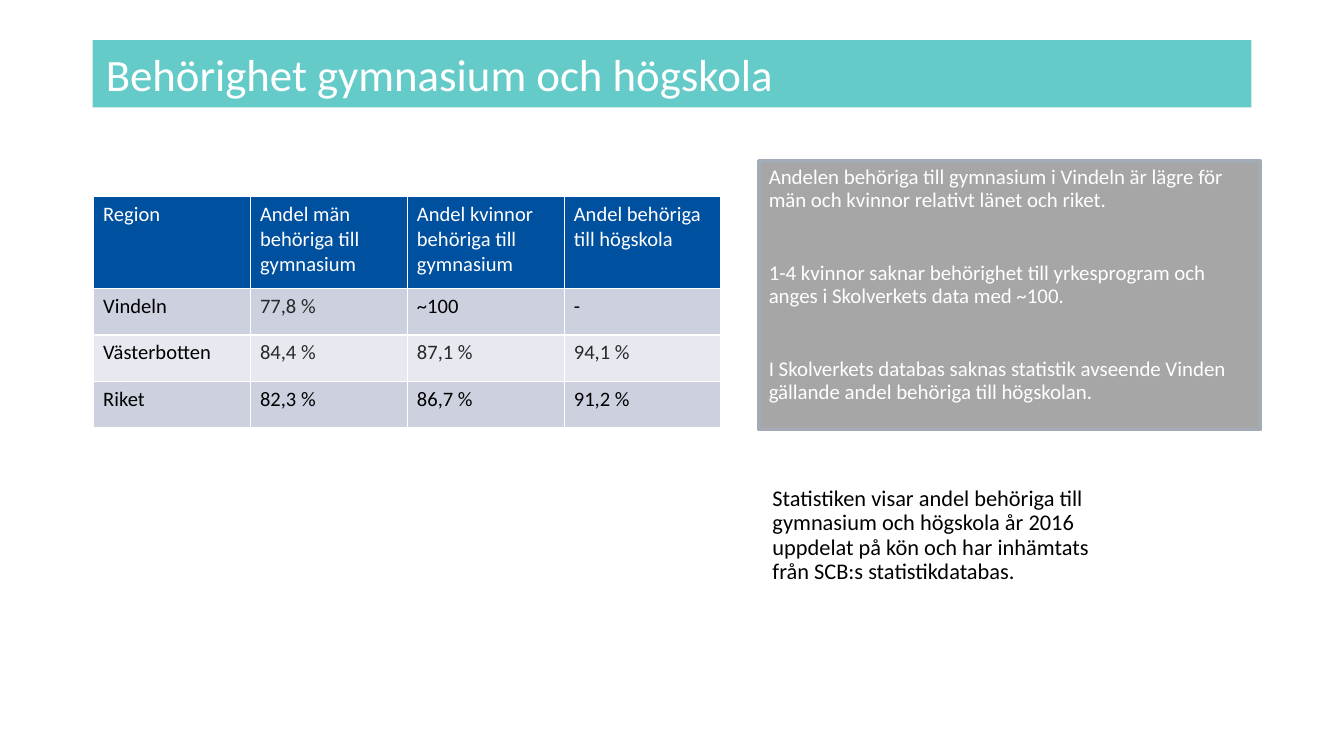
from pptx import Presentation
from pptx.dml.color import RGBColor
from pptx.enum import shapes, text
from pptx.util import Cm, Pt

WHITE = RGBColor(0xFF, 0xFF, 0xFF)
BLACK = RGBColor(0x00, 0x00, 0x00)
CHARCOAL = RGBColor(0x29, 0x29, 0x29)
TURQUOISE = RGBColor(0x64, 0xCB, 0xC9)
BLUE = RGBColor(0x00, 0x50, 0xA0)
DARK_BAND = RGBColor(0xCC, 0xD0, 0xDF)
LIGHT_BAND = RGBColor(0xE7, 0xE9, 0xF0)
GREY = RGBColor(0xA6, 0xA6, 0xA6)
GREY_EDGE = RGBColor(0xA3, 0xAB, 0xB6)

TIGHT_MARGINS = {
    "margin_left": Cm(0.18), "margin_right": Cm(0.18),
    "margin_top": Cm(0.1), "margin_bottom": Cm(0.1),
}

REGIONS = [
    ["Region", "Andel män behöriga till gymnasium",
     "Andel kvinnor behöriga till gymnasium", "Andel behöriga till högskola"],
    ["Vindeln", "77,8 %", "~100", "-"],
    ["Västerbotten", "84,4 %", "87,1 %", "94,1 %"],
    ["Riket", "82,3 %", "86,7 %", "91,2 %"],
]
CHARCOAL_VALUES = {"77,8 %", "84,4 %", "87,1 %", "94,1 %"}

COMMENTS = [
    "Andelen behöriga till gymnasium i Vindeln är lägre för män och kvinnor "
    "relativt länet och riket.",
    "1-4 kvinnor saknar behörighet till yrkesprogram och anges i Skolverkets "
    "data med ~100.",
    "I Skolverkets databas saknas statistik avseende Vinden gällande andel "
    "behöriga till högskolan.",
]
SOURCE_NOTE = (
    "Statistiken visar andel behöriga till gymnasium och högskola år 2016 "
    "uppdelat på kön och har inhämtats från SCB:s statistikdatabas."
)


def set_attributes(target, values):
    for name, value in values.items():
        setattr(target, name, value)


def style_font(paragraph, size, color):
    set_attributes(paragraph.font, {"name": "Calibri", "size": Pt(size), "bold": False})
    paragraph.font.color.rgb = color


def write_paragraphs(frame, contents, size, color, line_spacing=1.0, gap=0):
    """Fill a text frame, with a gap in points between paragraphs."""
    set_attributes(frame, {"word_wrap": True, "auto_size": text.MSO_AUTO_SIZE.NONE})
    for index, content in enumerate(contents):
        paragraph = frame.add_paragraph() if index else frame.paragraphs[0]
        paragraph.text = content
        set_attributes(paragraph, {
            "alignment": text.PP_ALIGN.LEFT,
            "line_spacing": line_spacing,
            "space_before": Pt(gap if index else 0),
        })
        style_font(paragraph, size, color)


def add_panel(slide, left, top, width, height, fill, edge=None):
    panel = slide.shapes.add_shape(
        shapes.MSO_SHAPE.RECTANGLE, Cm(left), Cm(top), Cm(width), Cm(height))
    panel.shadow.inherit = False
    panel.fill.solid()
    panel.fill.fore_color.rgb = fill
    if edge is None:
        panel.line.fill.background()
    else:
        panel.line.color.rgb = edge
        panel.line.width = Pt(2)
    return panel


def add_title(slide):
    banner = add_panel(slide, 1.75, 0.76, 21.9, 1.27, TURQUOISE)
    banner.text_frame.vertical_anchor = text.MSO_ANCHOR.MIDDLE
    write_paragraphs(banner.text_frame, ["Behörighet gymnasium och högskola"], 24, WHITE)


def add_region_table(slide):
    table = slide.shapes.add_table(
        len(REGIONS), len(REGIONS[0]), Cm(1.77), Cm(3.71), Cm(11.86), Cm(4.39)).table
    for row_index, values in enumerate(REGIONS):
        is_header = row_index == 0
        table.rows[row_index].height = Cm(1.74 if is_header else 0.88)
        band = BLUE if is_header else DARK_BAND if row_index % 2 else LIGHT_BAND
        for cell, value in zip(table.rows[row_index].cells, values):
            set_attributes(cell, {"text": value, **TIGHT_MARGINS})
            cell.fill.solid()
            cell.fill.fore_color.rgb = band
            color = WHITE if is_header else CHARCOAL if value in CHARCOAL_VALUES else BLACK
            style_font(cell.text_frame.paragraphs[0], 11, color)


def add_comments(slide):
    panel = add_panel(slide, 14.35, 3.05, 9.47, 5.07, GREY, GREY_EDGE)
    set_attributes(panel.text_frame, {
        "vertical_anchor": text.MSO_ANCHOR.TOP, **TIGHT_MARGINS})
    write_paragraphs(panel.text_frame, COMMENTS, 11.2, WHITE, line_spacing=0.9, gap=27.3)


def add_source_note(slide):
    note = slide.shapes.add_textbox(Cm(14.35), Cm(9.09), Cm(6.93), Cm(2.44))
    write_paragraphs(note.text_frame, [SOURCE_NOTE], 12, BLACK, line_spacing=0.9)


def main():
    deck = Presentation()
    set_attributes(deck, {"slide_width": Cm(25.4), "slide_height": Cm(14.29)})
    slide = deck.slides.add_slide(deck.slide_layouts[6])
    add_title(slide)
    add_region_table(slide)
    add_source_note(slide)
    add_comments(slide)
    deck.save("out.pptx")


if __name__ == "__main__":
    main()
